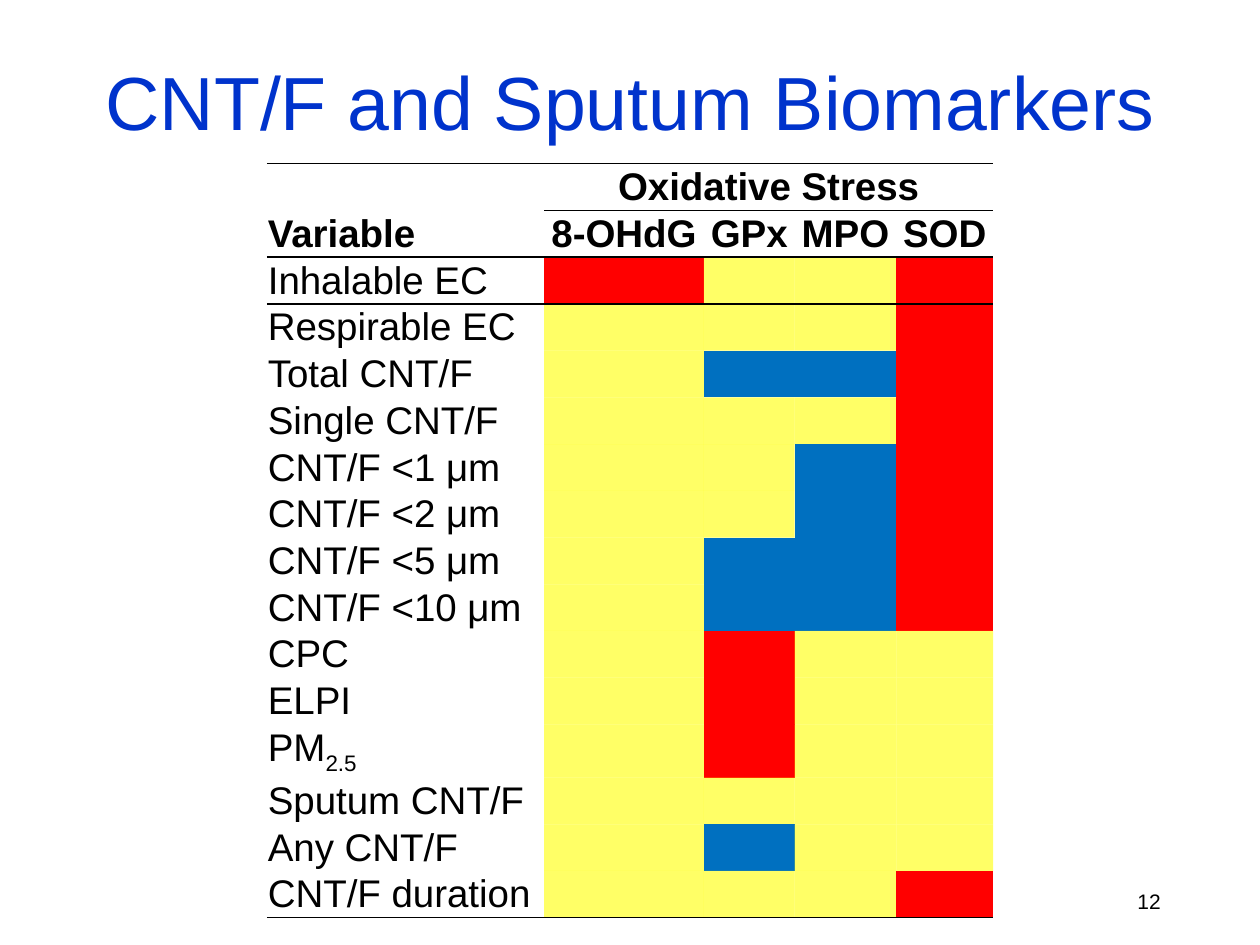
from lxml import etree
from pptx import Presentation
from pptx.dml.color import RGBColor
from pptx.enum.text import MSO_ANCHOR, PP_ALIGN
from pptx.oxml.ns import qn
from pptx.util import Cm, Pt

LEFT, CENTER, RIGHT = PP_ALIGN.LEFT, PP_ALIGN.CENTER, PP_ALIGN.RIGHT
MIDDLE = MSO_ANCHOR.MIDDLE

TITLE_BLUE = RGBColor(0x00, 0x33, 0xCC)
BLACK = RGBColor(0x00, 0x00, 0x00)
RED = RGBColor(0xFF, 0x00, 0x00)
BLUE = RGBColor(0x00, 0x70, 0xC0)
YELLOW = RGBColor(0xFF, 0xFF, 0x00)
YELLOW_OPACITY = 60
NO_STYLE = "{2D5ABB26-0587-4C30-8999-92F81FD0307C}"

BIOMARKERS = ["8-OHdG", "GPx", "MPO", "SOD"]
# One letter per biomarker: R red, B blue, Y yellow
EXPOSURES = [
    ("Inhalable EC", "RYYR"),
    ("Respirable EC", "YYYR"),
    ("Total CNT/F", "YBBR"),
    ("Single CNT/F", "YYYR"),
    ("CNT/F <1 μm", "YYBR"),
    ("CNT/F <2 μm", "YYBR"),
    ("CNT/F <5 μm", "YBBR"),
    ("CNT/F <10 μm", "YBBR"),
    ("CPC", "YRYY"),
    ("ELPI", "YRYY"),
    ("PM|2.5", "YRYY"),
    ("Sputum CNT/F", "YYYY"),
    ("Any CNT/F", "YBYY"),
    ("CNT/F duration", "YYYR"),
]
HEADER_ROWS = 2
COLUMN_WIDTHS = [5.59, 3.22, 1.83, 2.05, 1.95]
ROW_HEIGHT, SUBSCRIPT_ROW_HEIGHT = 0.9, 1.03


class SlideBuilder:
    """Holds the style and the current slide; lengths are in centimetres."""

    font = "Arial"
    table_size = 22
    fills = {"R": RED, "B": BLUE, "Y": YELLOW}

    def __init__(self, slide):
        self.slide = slide

    def format_run(self, run, size, color=BLACK, bold=False):
        run.font.name = self.font
        run.font.size = Pt(size)
        run.font.color.rgb = color
        run.font.bold = bold

    def text(self, words, left, top, width, height, size, color, align):
        frame = self.slide.shapes.add_textbox(
            Cm(left), Cm(top), Cm(width), Cm(height)).text_frame
        frame.word_wrap = True
        frame.vertical_anchor = MIDDLE
        frame.text = words
        paragraph = frame.paragraphs[0]
        paragraph.alignment = align
        self.format_run(paragraph.runs[0], size, color)

    def table(self, left, top, widths, heights):
        """Add an unstyled table whose cells have almost no margins."""
        frame = self.slide.shapes.add_table(
            len(heights), len(widths), Cm(left), Cm(top),
            Cm(sum(widths)), Cm(sum(heights)))
        table = frame.table
        table.first_row = table.horz_banding = False
        frame._element.find(".//" + qn("a:tableStyleId")).text = NO_STYLE
        for column, width in zip(table.columns, widths):
            column.width = Cm(width)
        for row, height in zip(table.rows, heights):
            row.height = Cm(height)
        for cell in table.iter_cells():
            cell.margin_left = cell.margin_right = Cm(0.02)
            cell.margin_top = Cm(0.01)
            cell.margin_bottom = 0
            cell.vertical_anchor = MIDDLE
            cell.fill.background()
        return table

    def cell_text(self, cell, words, align=LEFT, bold=False):
        """Write a cell; what follows a bar is set as subscript."""
        paragraph = cell.text_frame.paragraphs[0]
        paragraph.alignment = align
        for index, part in enumerate(words.split("|")):
            run = paragraph.add_run()
            run.text = part
            self.format_run(run, self.table_size, bold=bold)
            if index:
                run.font._element.set("baseline", "-25000")

    def cell_fill(self, cell, code):
        cell.fill.solid()
        cell.fill.fore_color.rgb = self.fills[code]
        if code == "Y":
            color = cell._tc.tcPr.find(".//" + qn("a:srgbClr"))
            etree.SubElement(color, qn("a:alpha"), val=str(YELLOW_OPACITY * 1000))

    def cell_rules(self, cell, top=False, bottom=False):
        """Draw black lines along the chosen edges, ahead of the fill."""
        edges = [tag for tag, wanted in (("a:lnT", top), ("a:lnB", bottom)) if wanted]
        for position, tag in enumerate(edges):
            line = etree.Element(qn(tag), w=str(Pt(1)))
            fill = etree.SubElement(line, qn("a:solidFill"))
            etree.SubElement(fill, qn("a:srgbClr"), val=str(BLACK))
            cell._tc.tcPr.insert(position, line)


def add_biomarker_table(builder):
    heights = [ROW_HEIGHT] * HEADER_ROWS + [
        SUBSCRIPT_ROW_HEIGHT if "|" in name else ROW_HEIGHT for name, _ in EXPOSURES]
    table = builder.table(5.38, 3.3, COLUMN_WIDTHS, heights)

    table.cell(0, 1).merge(table.cell(0, len(BIOMARKERS)))
    builder.cell_text(table.cell(0, 1), "Oxidative Stress", CENTER, bold=True)
    builder.cell_text(table.cell(1, 0), "Variable", bold=True)
    for column, biomarker in enumerate(BIOMARKERS, start=1):
        builder.cell_text(table.cell(1, column), biomarker, CENTER, bold=True)

    for row, (exposure, codes) in enumerate(EXPOSURES, start=HEADER_ROWS):
        builder.cell_text(table.cell(row, 0), exposure)
        for column, code in enumerate(codes, start=1):
            builder.cell_fill(table.cell(row, column), code)

    last_row = len(heights) - 1
    for column in range(len(COLUMN_WIDTHS)):
        is_biomarker = column > 0
        builder.cell_rules(table.cell(0, column), top=True, bottom=is_biomarker)
        builder.cell_rules(table.cell(1, column), top=is_biomarker, bottom=True)
        builder.cell_rules(table.cell(HEADER_ROWS, column), top=True)
        builder.cell_rules(table.cell(last_row, column), bottom=True)


def main():
    presentation = Presentation()
    presentation.slide_width, presentation.slide_height = Cm(25.4), Cm(19.05)
    builder = SlideBuilder(presentation.slides.add_slide(presentation.slide_layouts[6]))
    builder.text("CNT/F and Sputum Biomarkers", 1.78, 0.76, 21.84, 2.54,
                 43, TITLE_BLUE, CENTER)
    builder.text("12", 17.93, 17.65, 5.72, 1.02, 12, BLACK, RIGHT)
    add_biomarker_table(builder)
    presentation.save("out.pptx")


if __name__ == "__main__":
    main()
